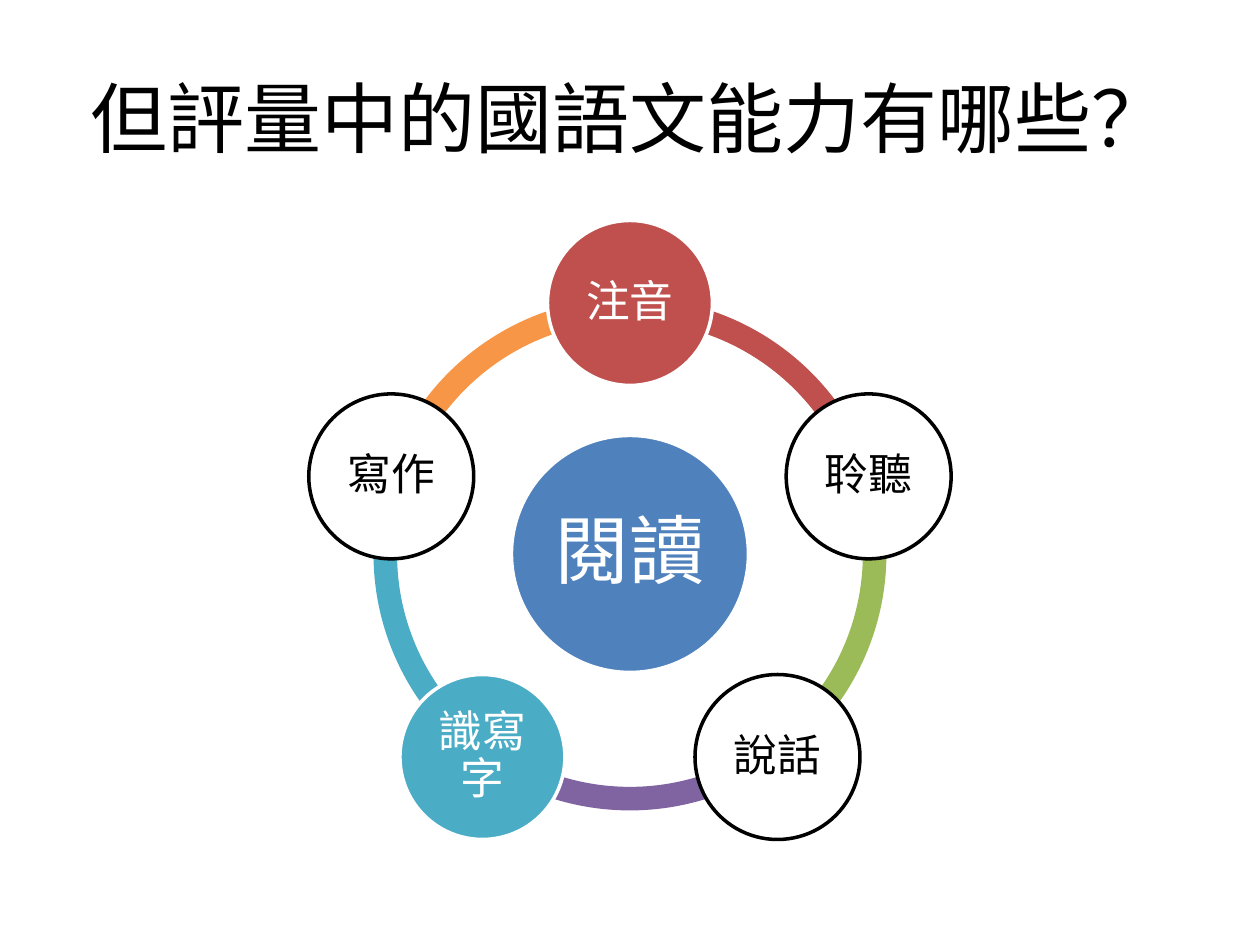
from math import cos, radians, sin

from pptx import Presentation
from pptx.dml.color import RGBColor
from pptx.enum.shapes import MSO_SHAPE
from pptx.enum.text import MSO_ANCHOR, PP_ALIGN
from pptx.util import Emu, Pt

ARC, CIRCLE = MSO_SHAPE.BLOCK_ARC, MSO_SHAPE.OVAL
MIDDLE, CENTER = MSO_ANCHOR.MIDDLE, PP_ALIGN.CENTER

COLORS = {
    "black": "000000",
    "white": "FFFFFF",
    "blue": "4F81BD",
    "red": "C0504D",
    "green": "9BBB59",
    "purple": "8064A2",
    "teal": "4BACC6",
    "orange": "F79646",
}
HUB = (630, 554)
RING_SIZE, HUB_SIZE, SKILL_SIZE = 513, 237, 165
ORBIT = 251
ARC_UNITS_PER_DEGREE = 0.6
ARC_THICKNESS = 0.046
ARC_COLORS = ["red", "green", "purple", "teal", "orange"]
SKILLS = [
    ("注音", "red", "white"),
    ("聆聽", "white", "black"),
    ("說話", "white", "black"),
    ("識寫字", "teal", "white"),
    ("寫作", "white", "black"),
]


def px(length):
    return Emu(round(length * 914400 / 126))


def rgb(name):
    return RGBColor.from_string(COLORS[name])


class SlideBuilder:
    font = "Calibri"
    outline = Pt(2)

    def __init__(self, presentation):
        self.slide = presentation.slides.add_slide(presentation.slide_layouts[5])

    def set_text(self, frame, text, size, color, inset, spacing):
        frame.text = text
        frame_format = {
            "word_wrap": True,
            "vertical_anchor": MIDDLE,
            "margin_left": px(inset),
            "margin_right": px(inset),
            "margin_top": px(inset),
            "margin_bottom": px(inset),
        }
        for name, value in frame_format.items():
            setattr(frame, name, value)
        paragraph = frame.paragraphs[0]
        paragraph.alignment = CENTER
        paragraph.line_spacing = spacing
        font = paragraph.runs[0].font
        font.name = self.font
        font.size = Pt(size)
        font.color.rgb = rgb(color)

    def title(self, text, left, top, width, height):
        heading = self.slide.shapes.title
        box = {"left": left, "top": top, "width": width, "height": height}
        for name, value in box.items():
            setattr(heading, name, px(value))
        self.set_text(heading.text_frame, text, 44, "black", 8, 1.0)

    def round_shape(self, kind, center, size, fill):
        left, top = (px(middle - size / 2) for middle in center)
        shape = self.slide.shapes.add_shape(kind, left, top, px(size), px(size))
        shape.shadow.inherit = False
        shape.fill.solid()
        shape.fill.fore_color.rgb = rgb(fill)
        return shape

    def arc(self, center, size, start, end, fill):
        band = self.round_shape(ARC, center, size, fill)
        band.line.fill.background()
        band.adjustments[0] = start % 360 * ARC_UNITS_PER_DEGREE
        band.adjustments[1] = end % 360 * ARC_UNITS_PER_DEGREE
        band.adjustments[2] = ARC_THICKNESS

    def circle(self, center, size, text, text_size, fill, ink, inset):
        disc = self.round_shape(CIRCLE, center, size, fill)
        disc.line.color.rgb = rgb(ink)
        disc.line.width = self.outline
        self.set_text(disc.text_frame, text, text_size, ink, inset, 0.9)


def main():
    presentation = Presentation()
    presentation.slide_width = px(1260)
    presentation.slide_height = px(945)
    builder = SlideBuilder(presentation)
    builder.title("但評量中的國語文能力有哪些？", 63, 38, 1134, 158)

    step = 360 // len(SKILLS)
    angles = [270 + step * index for index in range(len(SKILLS))]
    for angle, color in reversed(list(zip(angles, ARC_COLORS))):
        builder.arc(HUB, RING_SIZE, angle, angle + step, color)

    builder.circle(HUB, HUB_SIZE, "閱讀", 43, "blue", "white", 8)
    for angle, (skill, fill, ink) in zip(angles, SKILLS):
        center = (
            HUB[0] + ORBIT * cos(radians(angle)),
            HUB[1] + ORBIT * sin(radians(angle)),
        )
        builder.circle(center, SKILL_SIZE, skill, 25, fill, ink, 4)

    presentation.save("out.pptx")


if __name__ == "__main__":
    main()
